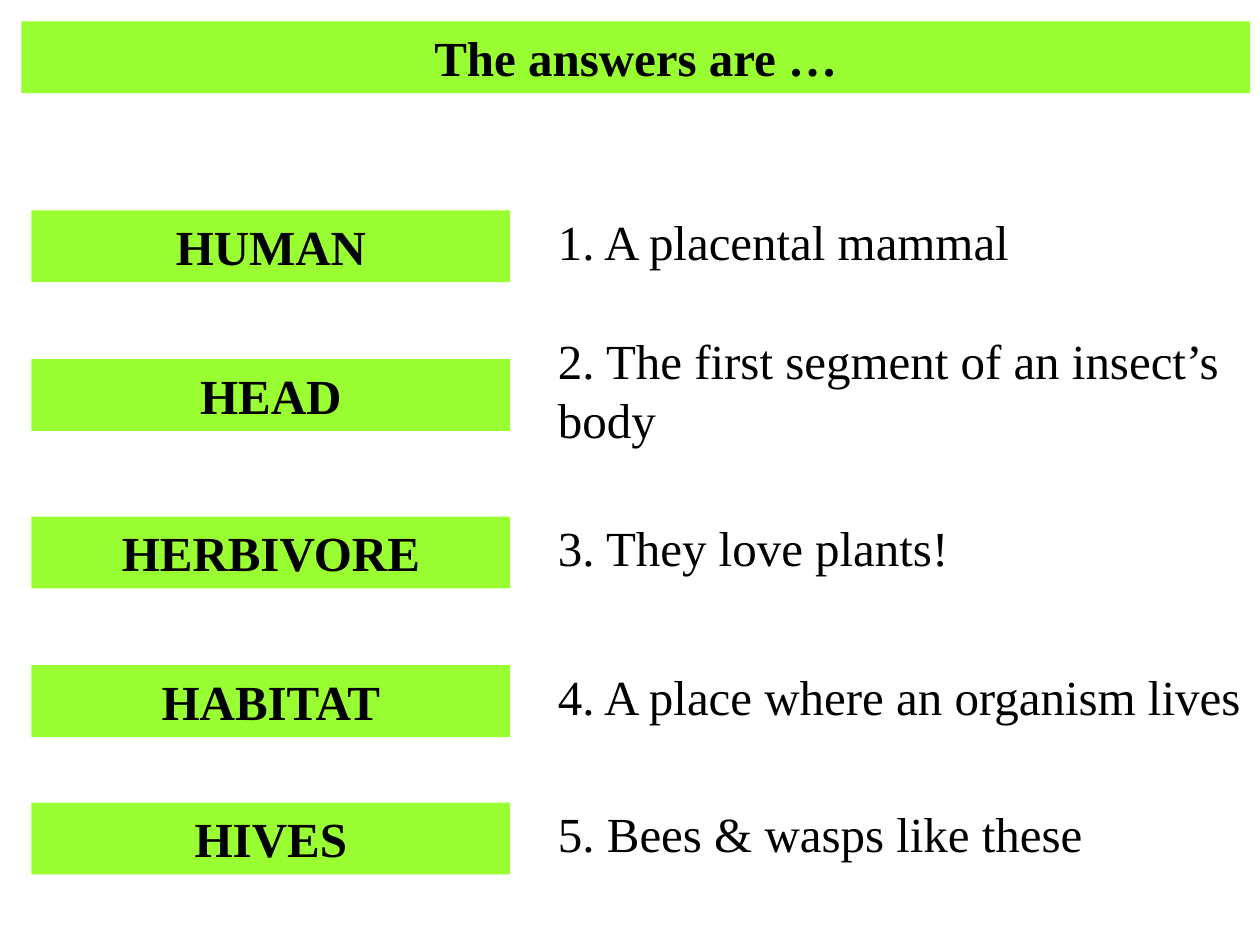
from pptx import Presentation
from pptx.dml.color import RGBColor
from pptx.enum.shapes import MSO_SHAPE
from pptx.enum.text import MSO_ANCHOR, PP_ALIGN
from pptx.util import Inches, Pt

RECTANGLE = MSO_SHAPE.RECTANGLE
LEFT, CENTER = PP_ALIGN.LEFT, PP_ALIGN.CENTER
TOP, MIDDLE = MSO_ANCHOR.TOP, MSO_ANCHOR.MIDDLE

TITLE = "The answers are …"
ROWS = [
    {"answer": "HUMAN", "clue": "1. A placental mammal", "top": 1.67},
    {"answer": "HEAD", "clue": "2. The first segment of an insect’s body", "top": 2.85,
     "clue_height": 1.04},
    {"answer": "HERBIVORE", "clue": "3. They love plants!", "top": 4.1},
    {"answer": "HABITAT", "clue": "4. A place where an organism lives", "top": 5.28,
     "clue_width": 5.67},
    {"answer": "HIVES", "clue": "5. Bees & wasps like these", "top": 6.37},
]
GREEN, BLACK = "99FF33", "000000"
BAR_HEIGHT = 0.57
ANSWER_LEFT, ANSWER_WIDTH = 0.25, 3.8
CLUE_LEFT, CLUE_WIDTH = 4.33, 5.58
CLUE_RAISE = 0.04
FONT = {"name": "Times New Roman", "size": Pt(28)}


def color(value):
    """Turn a hex string into a colour."""
    return RGBColor.from_string(value)


def write(shape, text, bold, alignment, anchor):
    """Put one formatted paragraph in a shape."""
    frame = shape.text_frame
    frame.word_wrap = True
    frame.vertical_anchor = anchor
    frame.text = text
    paragraph = frame.paragraphs[0]
    paragraph.alignment = alignment
    for name, value in {**FONT, "bold": bold}.items():
        setattr(paragraph.font, name, value)
    paragraph.font.color.rgb = color(BLACK)


def paint(shape):
    """Give a shape the green fill without an outline."""
    shape.fill.solid()
    shape.fill.fore_color.rgb = color(GREEN)
    shape.line.fill.background()


def add_title(slide):
    """Format the title placeholder as a full-width bar."""
    title = slide.shapes.title
    place = {"left": 0.17, "top": 0.17, "width": 9.75, "height": BAR_HEIGHT}
    for name, value in place.items():
        setattr(title, name, Inches(value))
    paint(title)
    write(title, TITLE, True, CENTER, MIDDLE)


def add_row(slide, row):
    """Add an answer bar and its clue, centred on nearly the same height."""
    bar = slide.shapes.add_shape(
        RECTANGLE, Inches(ANSWER_LEFT), Inches(row["top"]),
        Inches(ANSWER_WIDTH), Inches(BAR_HEIGHT))
    bar.shadow.inherit = False
    paint(bar)
    write(bar, row["answer"], True, CENTER, TOP)

    height = row.get("clue_height", BAR_HEIGHT)
    clue_top = row["top"] + (BAR_HEIGHT - height) / 2 - CLUE_RAISE
    clue = slide.shapes.add_textbox(
        Inches(CLUE_LEFT), Inches(clue_top),
        Inches(row.get("clue_width", CLUE_WIDTH)), Inches(height))
    write(clue, row["clue"], False, LEFT, TOP)


def main():
    """Build the answers slide."""
    presentation = Presentation()
    presentation.slide_width = Inches(10)
    presentation.slide_height = Inches(7.5)
    slide = presentation.slides.add_slide(presentation.slide_layouts.get_by_name("Title Only"))
    add_title(slide)
    for row in ROWS:
        add_row(slide, row)
    presentation.save("out.pptx")


if __name__ == "__main__":
    main()
